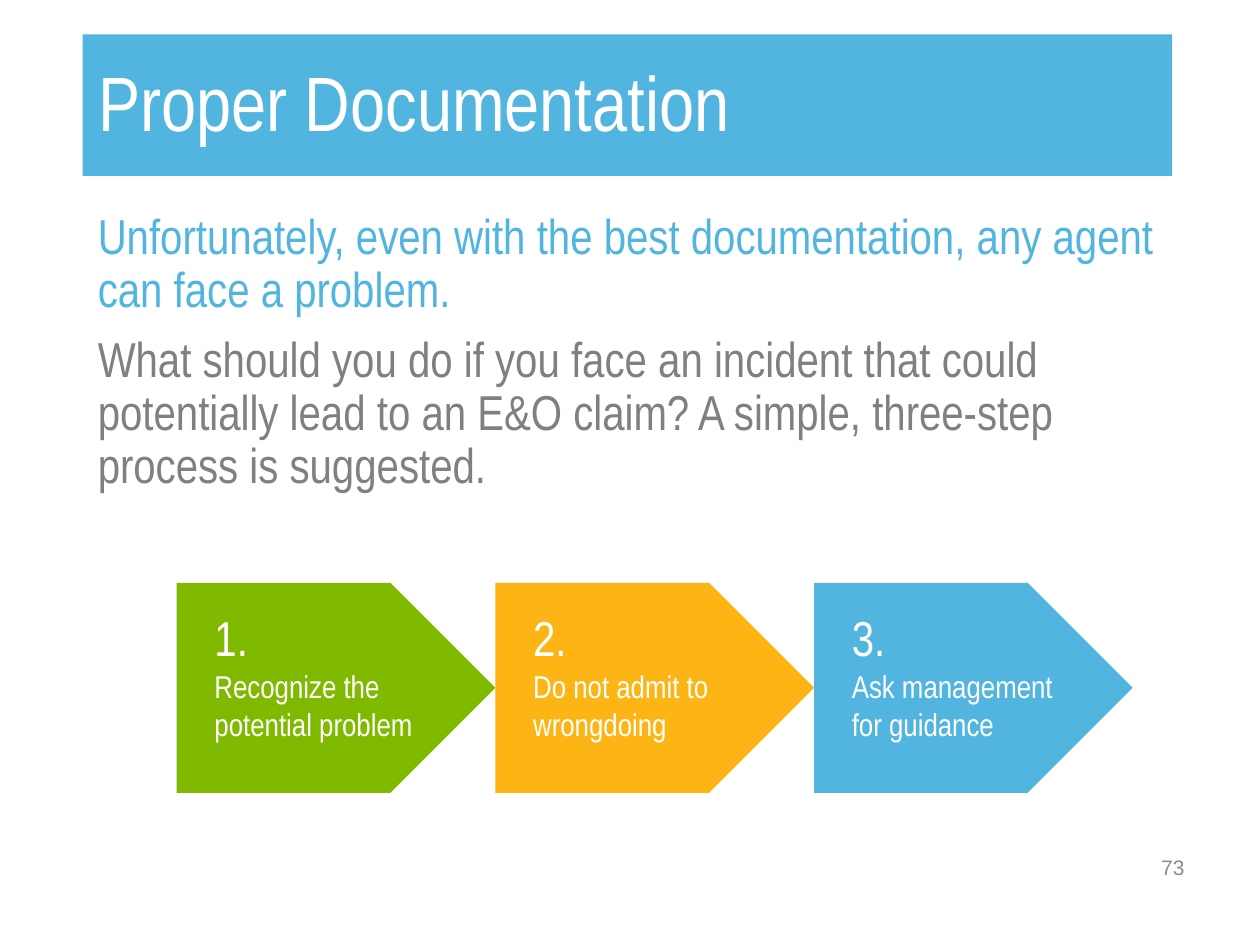
from pptx import Presentation
from pptx.dml.color import RGBColor
from pptx.enum import shapes, text
from pptx.util import Pt

BLUE, AMBER, GREEN = "51B5E0", "FCB514", "7FBA00"
WHITE, GREY, LIGHT_GREY = "FFFFFF", "808084", "8C8C8C"
STEPS = [
    ("1.", "Recognize the potential problem", GREEN),
    ("2.", "Do not admit to wrongdoing", AMBER),
    ("3.", "Ask management for guidance", BLUE),
]


def paint(fill, colour):
    fill.solid()
    fill.fore_color.rgb = RGBColor.from_string(colour)


def set_up_frame(frame, insets=(7.2, 3.6, 7.2, 3.6), anchor=text.MSO_ANCHOR.TOP):
    """Insets run left, top, right, bottom."""
    frame.word_wrap = True
    frame.auto_size = text.MSO_AUTO_SIZE.NONE
    frame.vertical_anchor = anchor
    (frame.margin_left, frame.margin_top,
     frame.margin_right, frame.margin_bottom) = map(Pt, insets)


def write(para, words, size, colour, font="Arial Narrow",
          align=text.PP_ALIGN.LEFT, spacing=1.0, before=0):
    para.alignment = align
    para.line_spacing = spacing
    para.space_before = Pt(before)
    span = para.add_run()
    span.text = words
    span.font.size = Pt(size)
    span.font.name = font
    span.font.color.rgb = RGBColor.from_string(colour)


def add_block(page, kind, left, top, width, height, colour):
    block = page.shapes.add_shape(kind, Pt(left), Pt(top), Pt(width), Pt(height))
    block.shadow.inherit = False
    paint(block.fill, colour)
    block.line.fill.background()
    return block


def add_title(page, left, top, width, height):
    band = add_block(page, shapes.MSO_SHAPE.RECTANGLE, left, top, width, height, BLUE)
    title = page.shapes.title
    # The band goes behind the title placeholder.
    title.element.addprevious(band.element)
    title.left, title.top = Pt(left + 1.5), Pt(top - 8)
    title.width, title.height = Pt(width - 2), Pt(height + 17)
    set_up_frame(title.text_frame, anchor=text.MSO_ANCHOR.MIDDLE)
    write(title.text_frame.paragraphs[0], "Proper Documentation", 44, WHITE, spacing=0.9)


def add_introduction(page, left, top, width, height):
    box = page.shapes.add_textbox(Pt(left), Pt(top), Pt(width), Pt(height))
    frame = box.text_frame
    set_up_frame(frame)
    write(frame.paragraphs[0],
          "Unfortunately, even with the best documentation, any agent can face a problem.",
          28, BLUE, spacing=0.9)
    write(frame.add_paragraph(),
          "What should you do if you face an incident that could potentially lead to "
          "an E&O claim? A simple, three-step process is suggested.",
          28, GREY, spacing=0.9, before=10)


def add_steps(page, left, top, width, height):
    step_width = width / len(STEPS)
    for index, (number, advice, colour) in enumerate(STEPS):
        arrow = add_block(page, shapes.MSO_SHAPE.PENTAGON,
                          left + index * step_width, top, step_width, height, colour)
        frame = arrow.text_frame
        set_up_frame(frame, insets=(21.6, 14.4, 7.2, 3.6))
        write(frame.paragraphs[0], number, 28, WHITE)
        write(frame.add_paragraph(), advice, 18, WHITE)


def add_page_number(page, left, top, width, height):
    box = page.shapes.add_textbox(Pt(left), Pt(top), Pt(width), Pt(height))
    set_up_frame(box.text_frame, anchor=text.MSO_ANCHOR.MIDDLE)
    write(box.text_frame.paragraphs[0], "73", 12, LIGHT_GREY, font="Arial",
          align=text.PP_ALIGN.RIGHT)


def main():
    deck = Presentation()
    deck.slide_width, deck.slide_height = Pt(720), Pt(540)
    page = deck.slides.add_slide(deck.slide_layouts.get_by_name("Title Only"))
    paint(page.background.fill, WHITE)
    add_title(page, 47.3, 19.7, 622.5, 80.8)
    add_introduction(page, 48.8, 117.5, 620.8, 342.5)
    add_steps(page, 101, 333, 546.3, 120)
    add_page_number(page, 516, 481, 168, 29)
    deck.save("out.pptx")


if __name__ == "__main__":
    main()
